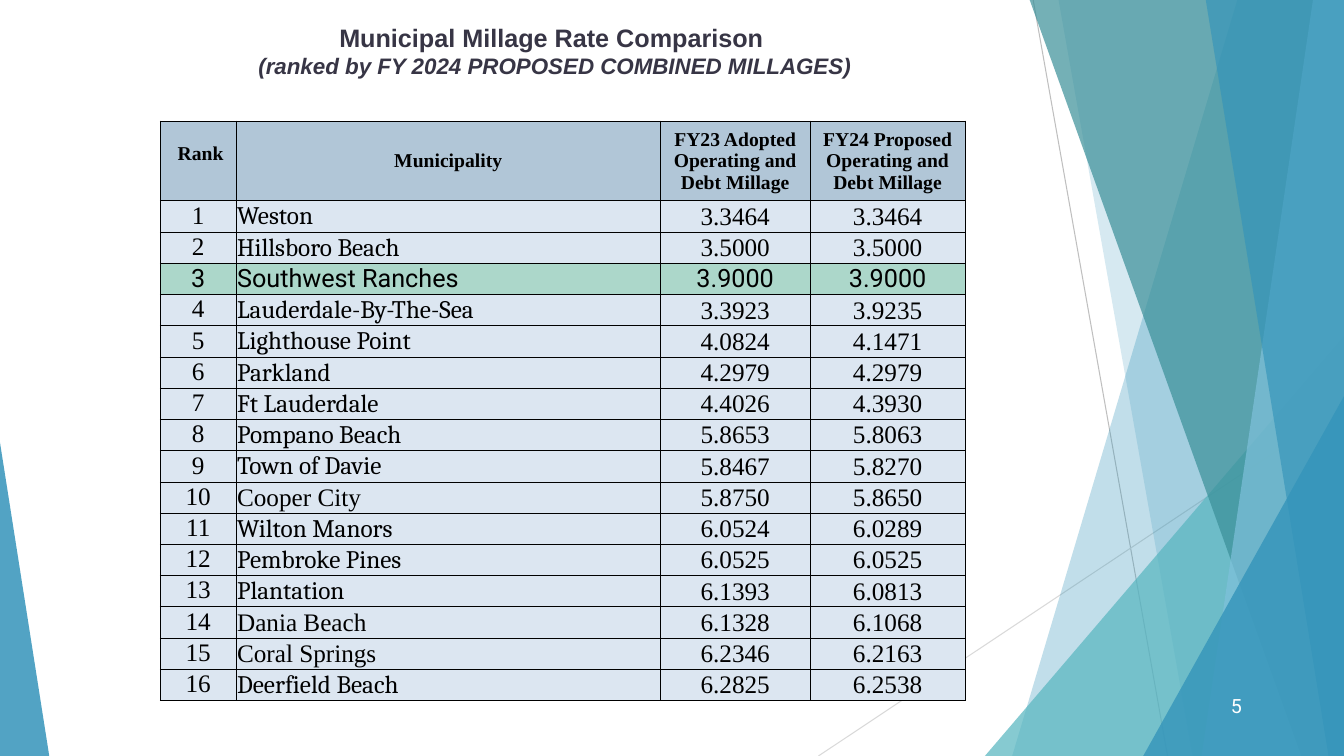
"""Build the municipal millage rate comparison slide."""
from typing import NamedTuple

from lxml.etree import SubElement
from pptx import Presentation
from pptx.dml.color import RGBColor as RGB
from pptx.enum.shapes import MSO_CONNECTOR as CONN, MSO_SHAPE as SHAPE
from pptx.enum.text import MSO_ANCHOR as ANCHOR, MSO_AUTO_SIZE as AUTO, PP_ALIGN as ALIGN
from pptx.oxml import parse_xml
from pptx.oxml.ns import nsdecls, qn
from pptx.util import Pt

COLORS = {
    "blue": "3494BA", "aqua": "58B6C0", "teal": "3A8F98", "sky": "7FC1DB",
    "gray": "BFBFBF", "pale": "D9D9D9", "title": "373545", "white": "FFFFFF",
    "black": "000000", "header": "B1C6D7", "row": "DCE6F1", "highlight": "ACD7CA",
}
WIDTH, HEIGHT = 960, 540
TOP = -0.6
TIMES, CAMBRIA, ROBOTO, ARIAL = "Times New Roman", "Cambria", "Roboto", "Arial"


class Line(NamedTuple):
    """Thin facet line from (x1, y1) to (x2, y2)."""
    x1: float
    y1: float
    x2: float
    y2: float
    color: str


class Band(NamedTuple):
    """Facet from the slide's right edge to a slanted left edge."""
    top_x: float
    bottom_x: float
    color: str
    alpha: int


class Corner(NamedTuple):
    """Right triangle standing on the slide's bottom edge."""
    left: float
    top: float
    width: float
    apex: float
    color: str
    alpha: int


class Town(NamedTuple):
    """Municipality with its two millage rates and fonts."""
    name: str
    fy23: str
    fy24: str
    name_font: str = CAMBRIA
    font: str = TIMES
    color: str = "row"


class Heading(NamedTuple):
    """Column heading with its width."""
    text: str
    width: float
    font: str = TIMES


LINES = [Line(738, 0, 834, HEIGHT, "gray"), Line(WIDTH, 290, 584.6, HEIGHT, "pale")]
FACETS = [
    Band(884, 723, "blue", 30),
    Band(756, 852, "blue", 20),
    Corner(703.5, 240, 256.5, 1, "aqua", 72),
    Band(735.3, 929.5, "teal", 70),
    Band(938, 858.4, "sky", 70),
    Band(861.2, 949, "blue", 65),
    Corner(816.6, 283, 143.4, 1, "blue", 80),
    Corner(0, 316, 35.2, 0, "blue", 85),
]
HEADINGS = [
    Heading(" Rank", 54.2),
    Heading("Municipality", 303),
    Heading("FY23 Adopted Operating and Debt Millage", 106.9),
    Heading("FY24 Proposed Operating and Debt Millage", 110.9),
]
TOWNS = [
    Town("Weston", "3.3464", "3.3464"),
    Town("Hillsboro Beach", "3.5000", "3.5000"),
    Town("Southwest Ranches", "3.9000", "3.9000", ROBOTO, ROBOTO, "highlight"),
    Town("Lauderdale-By-The-Sea", "3.3923", "3.9235"),
    Town("Lighthouse Point", "4.0824", "4.1471"),
    Town("Parkland", "4.2979", "4.2979"),
    Town("Ft Lauderdale", "4.4026", "4.3930"),
    Town("Pompano Beach", "5.8653", "5.8063"),
    Town("Town of Davie", "5.8467", "5.8270"),
    Town("Cooper City", "5.8750", "5.8650", TIMES),
    Town("Wilton Manors", "6.0524", "6.0289"),
    Town("Pembroke Pines", "6.0525", "6.0525"),
    Town("Plantation", "6.1393", "6.0813"),
    Town("Dania Beach", "6.1328", "6.1068", TIMES),
    Town("Coral Springs", "6.2346", "6.2163", TIMES),
    Town("Deerfield Beach", "6.2825", "6.2538"),
]


def rgb(color: str) -> RGB:
    """Look up a named colour."""
    return RGB.from_string(COLORS[color])


def format_text(p, font: str, size: float, color: str, align, bold=False, italic=False) -> None:
    """Set the font and alignment of a paragraph."""
    p.alignment = align
    p.font.name, p.font.size = font, Pt(size)
    p.font.bold, p.font.italic = bold, italic
    p.font.color.rgb = rgb(color)


def draw_line(shapes, line: Line) -> None:
    """Draw a thin line without shadow."""
    s = shapes.add_connector(CONN.STRAIGHT, Pt(line.x1), Pt(line.y1), Pt(line.x2), Pt(line.y2))
    s.line.color.rgb, s.line.width = rgb(line.color), Pt(0.75)
    SubElement(s._element.spPr, qn("a:effectLst"))


def draw_facet(shapes, facet: Band | Corner) -> None:
    """Draw a translucent facet."""
    if isinstance(facet, Band):
        builder = shapes.build_freeform(Pt(facet.top_x), Pt(TOP), scale=1.0)
        corners = [(WIDTH, TOP), (WIDTH, HEIGHT), (facet.bottom_x, HEIGHT)]
        builder.add_line_segments([(Pt(x), Pt(y)) for x, y in corners], close=True)
        s = builder.convert_to_shape()
    else:
        s = shapes.add_shape(SHAPE.ISOSCELES_TRIANGLE, Pt(facet.left), Pt(facet.top),
                             Pt(facet.width), Pt(HEIGHT - facet.top))
        s.adjustments[0] = facet.apex
    s.fill.solid()
    s.fill.fore_color.rgb = rgb(facet.color)
    clr = s._element.spPr.find(".//" + qn("a:srgbClr"))
    SubElement(clr, qn("a:alpha"), val=str(facet.alpha * 1000))
    s.line.fill.background()
    s.shadow.inherit = False


def fill_cell(cell, text: str, font: str, size: float, color: str, align, bold=False) -> None:
    """Write and format one table cell with thin black borders."""
    cell.margin_left = cell.margin_right = cell.margin_top = Pt(0.7)
    cell.margin_bottom = Pt(0)
    cell.vertical_anchor = ANCHOR.MIDDLE
    cell.text = text
    format_text(cell.text_frame.paragraphs[0], font, size, "black", align, bold)
    cell.fill.solid()
    cell.fill.fore_color.rgb = rgb(color)
    for i, side in enumerate("LRTB"):
        cell._tc.get_or_add_tcPr().insert(i, parse_xml(
            f'<a:ln{side} {nsdecls("a")} w="{Pt(0.5)}"><a:solidFill>'
            f'<a:srgbClr val="{COLORS["black"]}"/></a:solidFill></a:ln{side}>'))


def draw_table(shapes) -> None:
    """Draw the ranked millage table."""
    tbl = shapes.add_table(len(TOWNS) + 1, len(HEADINGS), Pt(114.5), Pt(86.4),
                           Pt(575), Pt(414)).table
    tbl.first_row = tbl.horz_banding = False
    for row in tbl.rows:
        row.height = Pt(22.3)
    tbl.rows[0].height = Pt(57)
    for c, head in enumerate(HEADINGS):
        tbl.columns[c].width = Pt(head.width)
        fill_cell(tbl.cell(0, c), head.text, head.font, 14, "header", ALIGN.CENTER, True)
    for rank, town in enumerate(TOWNS, 1):
        values = [str(rank), town.name, town.fy23, town.fy24]
        for c, text in enumerate(values):
            font = town.name_font if c == 1 else town.font
            align = ALIGN.LEFT if c == 1 else ALIGN.CENTER
            fill_cell(tbl.cell(rank, c), text, font, 18, town.color, align)
        tbl.cell(rank, 0).vertical_anchor = ANCHOR.TOP
    rank_head = tbl.cell(0, 0)
    rank_head.vertical_anchor, rank_head.margin_top = ANCHOR.TOP, Pt(16)


def main() -> None:
    """Build and save the slide."""
    prs = Presentation()
    prs.slide_width, prs.slide_height = Pt(WIDTH), Pt(HEIGHT)
    slide = prs.slides.add_slide(prs.slide_layouts[5])
    for line in LINES:
        draw_line(slide.shapes, line)
    for facet in FACETS:
        draw_facet(slide.shapes, facet)

    title = slide.shapes.title
    title.left, title.top, title.width, title.height = Pt(90.7), Pt(12.2), Pt(611.3), Pt(48.2)
    tf = title.text_frame
    tf.text = "Municipal Millage Rate Comparison \n(ranked by FY 2024 PROPOSED COMBINED MILLAGES)"
    tf.auto_size, tf.vertical_anchor, tf.word_wrap = AUTO.NONE, ANCHOR.TOP, True
    format_text(tf.paragraphs[0], ARIAL, 18, "title", ALIGN.CENTER, True)
    format_text(tf.paragraphs[1], ARIAL, 16, "title", ALIGN.CENTER, True, True)

    number = slide.shapes.add_textbox(Pt(840.2), Pt(489.6), Pt(54), Pt(28.8))
    tf = number.text_frame
    tf.text, tf.word_wrap, tf.vertical_anchor = "5", True, ANCHOR.MIDDLE
    format_text(tf.paragraphs[0], ROBOTO, 14, "white", ALIGN.RIGHT)
    draw_table(slide.shapes)
    prs.save("out.pptx")


if __name__ == "__main__":
    main()
